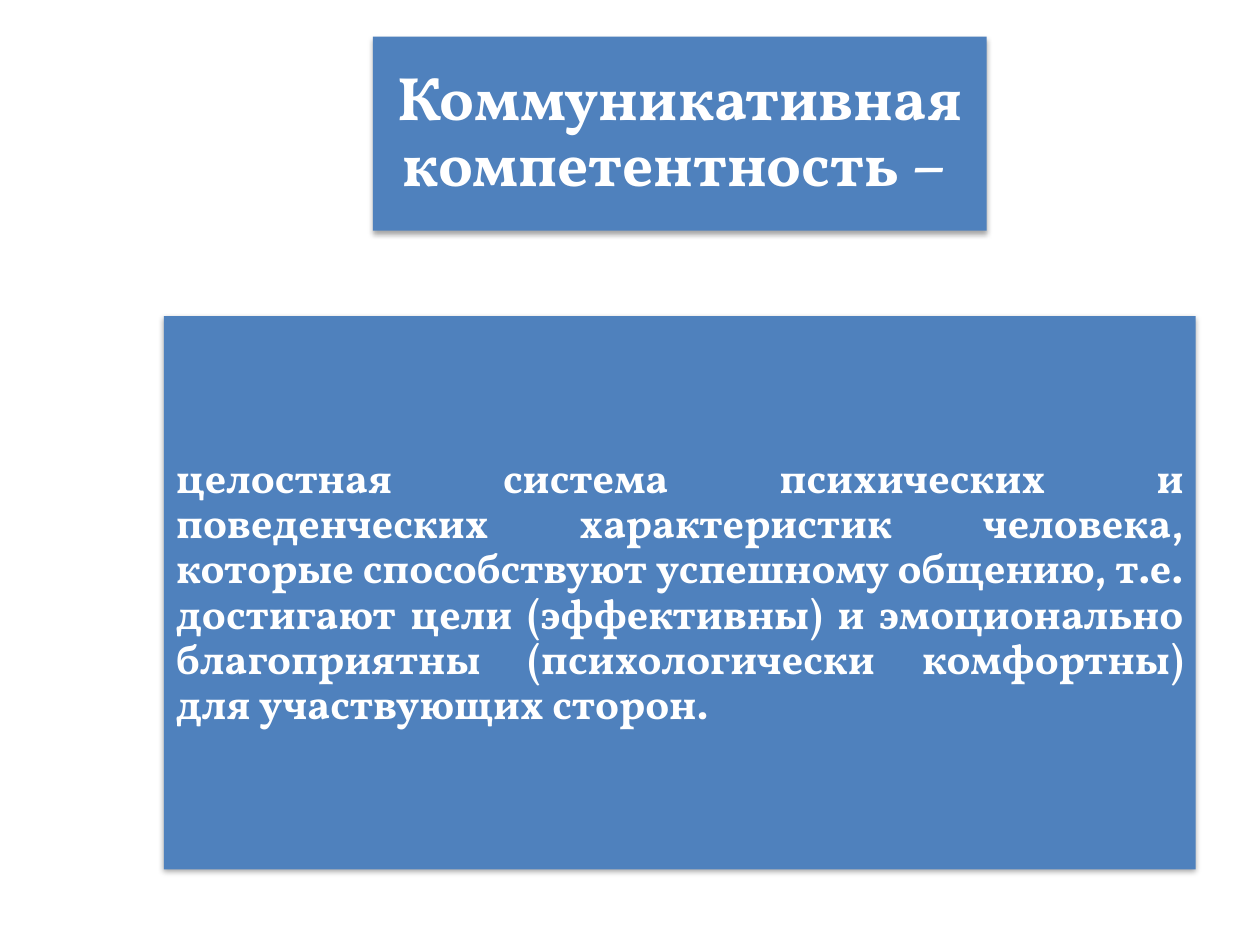
"""Build a slide that defines communicative competence."""
import pptx
import pptx.dml.color
import pptx.enum.shapes
import pptx.enum.text
import pptx.oxml
import pptx.oxml.ns
import pptx.util

TITLE = "Коммуникативная компетентность – "
DEFINITION = (
    "целостная система психических и поведенческих характеристик человека, "
    "которые способствуют успешному общению, т.е. достигают цели (эффективны) "
    "и эмоционально благоприятны (психологически комфортны) для участвующих сторон."
)
COLORS = {"panel": "4F81BD", "text": "FFFFFF", "shadow": "000000"}
FONT = "Vollkorn"
WIDTH, HEIGHT = 10, 7.5
TITLE_BOX = (2.96, 0.29, 4.87, 1.54)
DEFINITION_BOX = (1.3, 2.51, 8.19, 4.39)
SHADOW = (
    f'<a:outerShdw {pptx.oxml.ns.nsdecls("a")} blurRad="40000" dist="23000" '
    'dir="5400000" rotWithShape="0">'
    f'<a:srgbClr val="{COLORS["shadow"]}"><a:alpha val="35000"/></a:srgbClr>'
    "</a:outerShdw>"
)


def rgb(name):
    """Return a named colour."""
    return pptx.dml.color.RGBColor.from_string(COLORS[name])


def format_panel(sp, box, text, size, align, inset):
    """Place a panel, give it fill and shadow, and set its text."""
    sp.left, sp.top, sp.width, sp.height = map(pptx.util.Inches, box)
    sp.fill.solid()
    sp.fill.fore_color.rgb = rgb("panel")
    sp.line.fill.background()
    sp.shadow.inherit = False
    effects = sp.element.spPr.find(pptx.oxml.ns.qn("a:effectLst"))
    effects.append(pptx.oxml.parse_xml(SHADOW))

    tf = sp.text_frame
    tf.text = text
    tf.word_wrap = True
    tf.auto_size = pptx.enum.text.MSO_AUTO_SIZE.NONE
    tf.vertical_anchor = pptx.enum.text.MSO_ANCHOR.MIDDLE
    margin = pptx.util.Inches(inset)
    tf.margin_left = tf.margin_top = tf.margin_right = tf.margin_bottom = margin
    p = tf.paragraphs[0]
    p.alignment = align
    p.line_spacing = 0.9
    p.font.name = FONT
    p.font.size = pptx.util.Pt(size)
    p.font.bold = True
    p.font.color.rgb = rgb("text")


def main():
    """Create and save the presentation."""
    prs = pptx.Presentation()
    prs.slide_width = pptx.util.Inches(WIDTH)
    prs.slide_height = pptx.util.Inches(HEIGHT)
    s = prs.slides.add_slide(prs.slide_layouts.get_by_name("Title Only"))
    align = pptx.enum.text.PP_ALIGN
    format_panel(s.shapes.title, TITLE_BOX, TITLE, 35, align.CENTER, 0.15)
    panel = s.shapes.add_shape(
        pptx.enum.shapes.MSO_SHAPE.RECTANGLE, *map(pptx.util.Inches, DEFINITION_BOX)
    )
    format_panel(panel, DEFINITION_BOX, DEFINITION, 24, align.JUSTIFY, 0.1)
    prs.save("out.pptx")


if __name__ == "__main__":
    main()
